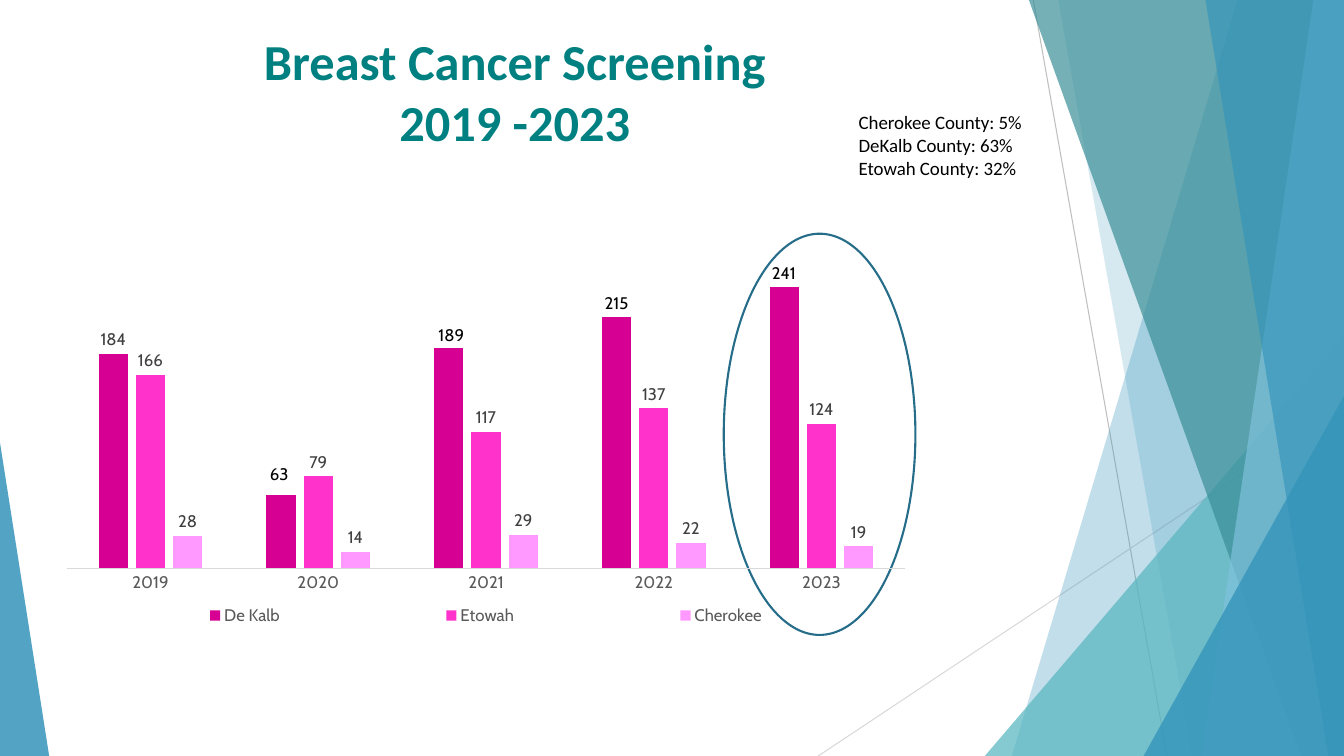
from dataclasses import dataclass

from lxml.etree import SubElement
from pptx import Presentation
from pptx.chart.chart import Chart
from pptx.chart.data import CategoryChartData
from pptx.dml.color import RGBColor
from pptx.dml.fill import FillFormat
from pptx.enum.chart import XL_CHART_TYPE, XL_LABEL_POSITION, XL_LEGEND_POSITION, XL_TICK_MARK
from pptx.enum.shapes import MSO_CONNECTOR, MSO_SHAPE
from pptx.enum.text import MSO_ANCHOR, PP_ALIGN
from pptx.oxml import parse_xml
from pptx.oxml.ns import nsdecls, qn
from pptx.shapes.autoshape import Shape
from pptx.slide import Slide
from pptx.text.text import Font, TextFrame
from pptx.util import Cm, Pt

SLIDE_WIDTH, SLIDE_HEIGHT = 33.87, 19.05


@dataclass
class Ray:
    start: tuple[float, float]
    end: tuple[float, float]
    color: str


@dataclass
class Facet:
    """A full-height panel that reaches the right edge of the slide."""
    top_left: float
    bottom_left: float
    color: str
    opacity: int


@dataclass
class Corner:
    """A right triangle standing on the bottom edge of the slide."""
    left: float
    width: float
    height: float
    apex: float
    color: str
    opacity: int


@dataclass
class County:
    name: str
    screenings: tuple[int, ...]
    color: str


@dataclass
class BarLabel:
    text: str
    left: float
    top: float


RAYS = [
    Ray((26.04, 0), (29.41, SLIDE_HEIGHT), "BFBFBF"),
    Ray((SLIDE_WIDTH, 10.24), (20.62, SLIDE_HEIGHT), "D9D9D9"),
]
# Back to front
DECORATION = [
    Facet(31.19, 25.5, "3494BA", 30),
    Facet(26.67, 30.05, "3494BA", 20),
    Corner(24.82, 9.05, 10.59, 1, "58B6C0", 72),
    Facet(25.93, 32.79, "3A8F98", 70),
    Facet(33.1, 30.28, "7FC1DB", 70),
    Facet(30.38, 33.48, "3494BA", 65),
    Corner(28.82, 5.05, 9.07, 1, "3494BA", 80),
    Corner(0, 1.24, 7.9, 0, "3494BA", 85),
]
YEARS = ["2019", "2020", "2021", "2022", "2023"]
COUNTIES = [
    County("De Kalb", (184, 63, 189, 215, 241), "D60093"),
    County("Etowah", (166, 79, 117, 137, 124), "FF33CC"),
    County("Cherokee", (28, 14, 29, 22, 19), "FF99FF"),
]
BAR_LABELS = [
    BarLabel("63", 6.55, 11.56),
    BarLabel("189", 10.8, 8.05),
    BarLabel("215", 14.99, 7.26),
    BarLabel("241", 19.2, 6.5),
]


def rgb(color: str) -> RGBColor:
    return RGBColor.from_string(color)


def fill_solid(fill: FillFormat, color: str) -> None:
    fill.solid()
    fill.fore_color.rgb = rgb(color)


def set_font(font: Font, name: str, size: float, color: str, bold: bool = False) -> None:
    font.name, font.size, font.bold = name, Pt(size), bold
    font.color.rgb = rgb(color)


def set_text(text_frame: TextFrame, text: str, name: str, size: float, color: str,
             bold: bool = False) -> None:
    text_frame.text = text
    text_frame.word_wrap = True
    for paragraph in text_frame.paragraphs:
        for run in paragraph.runs:
            set_font(run.font, name, size, color, bold)


def add_text(slide: Slide, text: str, left: float, top: float, width: float, height: float,
             name: str, size: float) -> None:
    box = slide.shapes.add_textbox(Cm(left), Cm(top), Cm(width), Cm(height))
    set_text(box.text_frame, text, name, size, "000000")


def add_ray(slide: Slide, ray: Ray) -> None:
    line = slide.shapes.add_connector(
        MSO_CONNECTOR.STRAIGHT, *(Cm(value) for value in ray.start + ray.end))
    line.line.color.rgb = rgb(ray.color)
    line.line.width = Pt(0.75)
    SubElement(line._element.spPr, qn("a:effectLst"))


def add_facet(slide: Slide, facet: Facet) -> Shape:
    builder = slide.shapes.build_freeform(Cm(facet.top_left), 0)
    builder.add_line_segments([
        (Cm(SLIDE_WIDTH), 0),
        (Cm(SLIDE_WIDTH), Cm(SLIDE_HEIGHT)),
        (Cm(facet.bottom_left), Cm(SLIDE_HEIGHT)),
    ])
    return builder.convert_to_shape()


def add_corner(slide: Slide, corner: Corner) -> Shape:
    shape = slide.shapes.add_shape(
        MSO_SHAPE.ISOSCELES_TRIANGLE, Cm(corner.left), Cm(SLIDE_HEIGHT - corner.height),
        Cm(corner.width), Cm(corner.height))
    shape.adjustments[0] = corner.apex
    return shape


def add_decoration(slide: Slide, item: Facet | Corner) -> None:
    shape = add_facet(slide, item) if isinstance(item, Facet) else add_corner(slide, item)
    shape.shadow.inherit = False
    shape.line.fill.background()
    fill_solid(shape.fill, item.color)
    color = shape._element.spPr.find(qn("a:solidFill")).find(qn("a:srgbClr"))
    SubElement(color, qn("a:alpha"), val=str(item.opacity * 1000))


def make_layout(x: float, y: float, width: float, height: float, inner: bool = False):
    target = '<c:layoutTarget val="inner"/>' if inner else ""
    return parse_xml(
        f'<c:layout {nsdecls("c")}><c:manualLayout>{target}'
        f'<c:xMode val="edge"/><c:yMode val="edge"/><c:x val="{x}"/><c:y val="{y}"/>'
        f'<c:w val="{width}"/><c:h val="{height}"/></c:manualLayout></c:layout>')


def place_chart_parts(chart: Chart) -> None:
    plot_area = chart._chartSpace.chart.plotArea
    legend = chart.legend._element
    for parent in (plot_area, legend):
        for layout in parent.findall(qn("c:layout")):
            parent.remove(layout)
    plot_area.insert(0, make_layout(0.02, 0.02, 0.96, 0.82, inner=True))
    legend.find(qn("c:legendPos")).addnext(make_layout(0, 0.91, 1, 0.08))


def add_screening_chart(slide: Slide) -> None:
    data = CategoryChartData(number_format="#,##0")
    data.categories = YEARS
    for county in COUNTIES:
        data.add_series(county.name, county.screenings)
    chart = slide.shapes.add_chart(
        XL_CHART_TYPE.COLUMN_CLUSTERED, Cm(1.24), Cm(5.28), Cm(22.02), Cm(10.77), data).chart
    set_font(chart.font, "Cabin", 10, "000000")
    chart.has_title = False

    # Axes and legend
    years, values = chart.category_axis, chart.value_axis
    years.major_tick_mark = XL_TICK_MARK.NONE
    years.format.line.color.rgb = rgb("D9D9D9")
    years.format.line.width = Pt(0.75)
    set_font(years.tick_labels.font, "Cabin", 12, "595959")
    values.visible = values.has_major_gridlines = False
    values.minimum_scale, values.maximum_scale = 0, 300
    chart.has_legend = True
    chart.legend.position = XL_LEGEND_POSITION.BOTTOM
    chart.legend.include_in_layout = False
    set_font(chart.legend.font, "Cabin", 12, "595959")
    place_chart_parts(chart)

    # Bars and their labels
    plot = chart.plots[0]
    plot.gap_width, plot.overlap, plot.vary_by_categories = 219, -27, False
    for series, county in zip(plot.series, COUNTIES):
        fill_solid(series.format.fill, county.color)
        labels = series.data_labels
        labels.show_value = county is not COUNTIES[0]
        labels.position = XL_LABEL_POSITION.OUTSIDE_END
        set_font(labels.font, "Cabin", 12, "404040")
    first_label = plot.series[0].points[0].data_label
    set_font(first_label.font, "Cabin", 12, "404040")
    first_label.position = XL_LABEL_POSITION.OUTSIDE_END


def main() -> None:
    presentation = Presentation()
    presentation.slide_width, presentation.slide_height = Cm(SLIDE_WIDTH), Cm(SLIDE_HEIGHT)
    slide = presentation.slides.add_slide(presentation.slide_layouts[5])

    # Background decoration
    for ray in RAYS:
        add_ray(slide, ray)
    for item in DECORATION:
        add_decoration(slide, item)

    # Title and county shares
    title = slide.shapes.title
    title.left, title.top, title.width, title.height = Cm(0.2), Cm(0.64), Cm(25.55), Cm(3.81)
    set_text(title.text_frame, "Breast Cancer Screening\v2019 -2023", "Calibri", 36, "008080", True)
    title.text_frame.vertical_anchor = MSO_ANCHOR.TOP
    title.text_frame.paragraphs[0].alignment = PP_ALIGN.CENTER
    add_text(slide, "Cherokee County: 5%\nDeKalb County: 63%\nEtowah County: 32%",
             21.39, 2.67, 5.87, 1.98, "Calibri", 13.5)

    # Ring around the latest year
    ring = slide.shapes.add_shape(MSO_SHAPE.OVAL, Cm(18.24), Cm(5.89), Cm(4.83), Cm(10.11))
    ring.shadow.inherit = False
    ring.fill.background()
    ring.line.color.rgb = rgb("266D8A")
    ring.line.width = Pt(1.5)

    # Chart with separate labels above the De Kalb bars
    add_screening_chart(slide)
    for label in BAR_LABELS:
        add_text(slide, label.text, label.left, label.top, 1.42, 0.76, "Cabin", 12)

    presentation.save("out.pptx")


if __name__ == "__main__":
    main()
